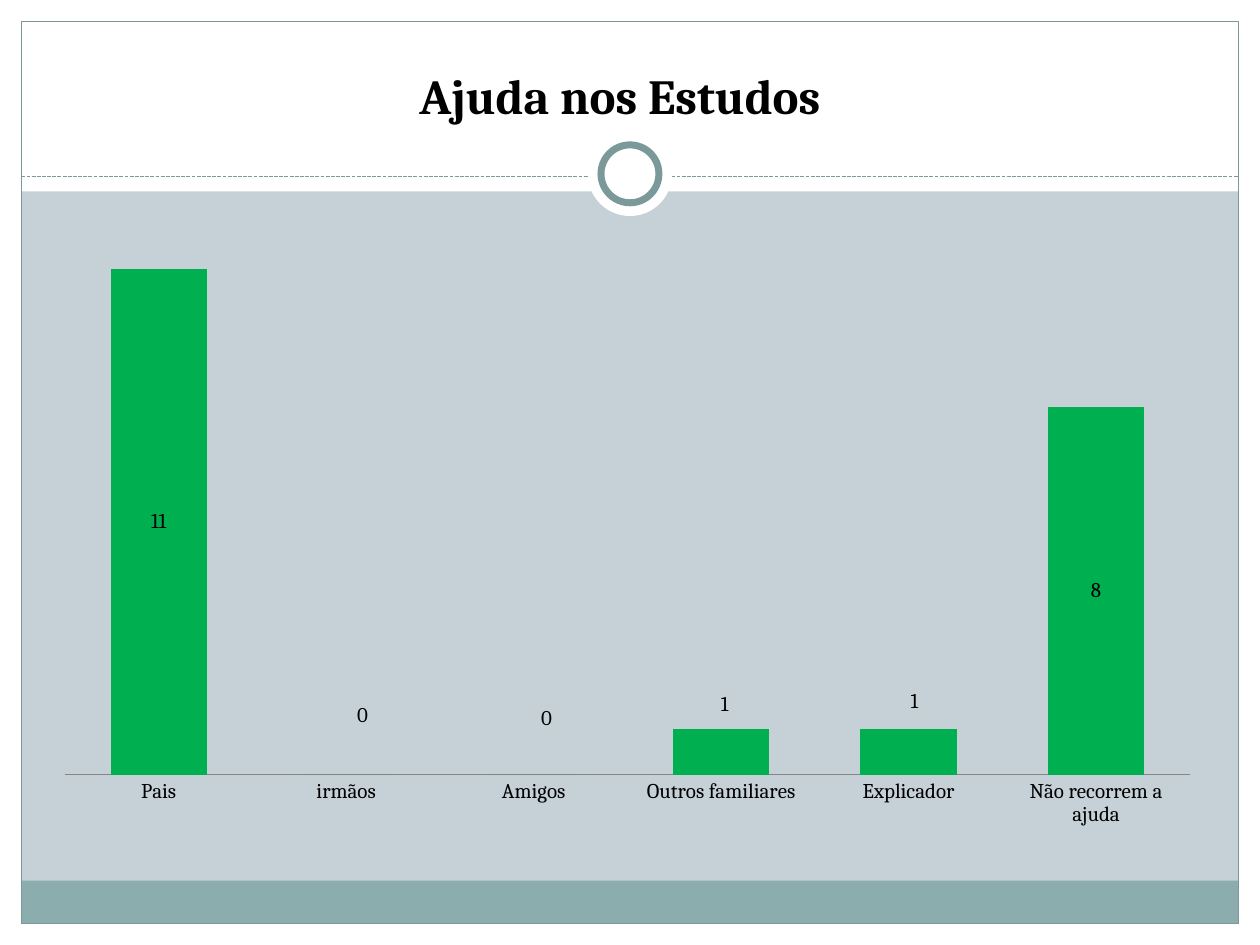
import pptx
import pptx.chart.data
import pptx.dml.color
import pptx.enum.chart
import pptx.enum.dml
import pptx.enum.shapes
import pptx.enum.text
import pptx.oxml
import pptx.oxml.ns
import pptx.util

WIDTH, HEIGHT = 10, 7.5
MARGIN = 0.17
HEADER_HEIGHT = 1.52
RULE_Y = 1.4
FONT = "Cambria"
WHITE, BLACK, TEAL = "FFFFFF", "000000", "7C999A"
SHAPES = pptx.enum.shapes.MSO_SHAPE

HELP_COUNTS = {
    "Pais": 11,
    "irmãos": 0,
    "Amigos": 0,
    "Outros familiares": 1,
    "Explicador": 1,
    "Não recorrem a ajuda": 8,
}
# Label shifts from the bar centre, as shares of the chart's size
LABEL_SHIFTS = {1: (0.014, -0.094), 2: (0.011, -0.089),
                3: (0.003, -0.075), 4: (0.005, -0.079)}


def color(value):
    return pptx.dml.color.RGBColor.from_string(value)


def inches(box):
    return [pptx.util.Inches(length) for length in box]


def style_font(font, size, bold=False):
    font.name = FONT
    font.size = pptx.util.Pt(size)
    font.bold = bold
    font.color.rgb = color(BLACK)


def add_panel(slide, box, fill=None, line_width=None, kind=SHAPES.RECTANGLE):
    panel = slide.shapes.add_shape(kind, *inches(box))
    panel.shadow.inherit = False
    if fill:
        panel.fill.solid()
        panel.fill.fore_color.rgb = color(fill)
    else:
        panel.fill.background()
    if line_width:
        panel.line.color.rgb = color(TEAL)
        panel.line.width = pptx.util.Pt(line_width)
    else:
        panel.line.fill.background()


def add_frame(slide, width, height):
    # White margins and header, then the footer band and outline
    for box in ((0, height - MARGIN, width, MARGIN),
                (0, 0, width, HEADER_HEIGHT),
                (0, 0, MARGIN, height),
                (width - MARGIN, 0, MARGIN, height)):
        add_panel(slide, box, WHITE)
    inner_width = width - 2 * MARGIN
    footer_height = 2 * MARGIN
    add_panel(slide, (MARGIN, height - MARGIN - footer_height, inner_width, footer_height), "8CADAE")
    add_panel(slide, (MARGIN, MARGIN, inner_width, height - 2 * MARGIN), line_width=0.75)

    # Dashed header rule
    rule = slide.shapes.add_connector(
        pptx.enum.shapes.MSO_CONNECTOR.STRAIGHT,
        *inches((MARGIN, RULE_Y, width - MARGIN, RULE_Y)))
    rule.line.color.rgb = color(TEAL)
    rule.line.width = pptx.util.Pt(0.75)
    rule.line.dash_style = pptx.enum.dml.MSO_LINE.SQUARE_DOT
    rule.element.spPr.append(pptx.oxml.parse_xml(
        f"<a:effectLst {pptx.oxml.ns.nsdecls('a')}/>"))

    # Ring on the rule, with a white halo
    center_x, center_y = width / 2, 1.38
    for diameter, line_width in ((0.67, None), (0.46, 4)):
        add_panel(slide, (center_x - diameter / 2, center_y - diameter / 2, diameter, diameter),
                  WHITE, line_width, SHAPES.OVAL)


def add_title(slide, box):
    title = slide.shapes.title
    title.left, title.top, title.width, title.height = inches(box)
    frame = title.text_frame
    frame.word_wrap = True
    frame.auto_size = pptx.enum.text.MSO_AUTO_SIZE.SHAPE_TO_FIT_TEXT
    paragraph = frame.paragraphs[0]
    paragraph.alignment = pptx.enum.text.PP_ALIGN.CENTER
    run = paragraph.add_run()
    run.text = "Ajuda nos Estudos"
    style_font(run.font, 28, bold=True)
    # Bring the title in front of the header panel
    title.element.getparent().append(title.element)


def manual_layout(content):
    return pptx.oxml.parse_xml(
        f"<c:layout {pptx.oxml.ns.nsdecls('c')}><c:manualLayout>{content}"
        "</c:manualLayout></c:layout>")


def add_help_chart(slide, box):
    help_data = pptx.chart.data.CategoryChartData()
    help_data.categories = list(HELP_COUNTS)
    help_data.add_series("Series 1", list(HELP_COUNTS.values()))
    chart = slide.shapes.add_chart(
        pptx.enum.chart.XL_CHART_TYPE.COLUMN_STACKED, *inches(box), help_data).chart
    chart.has_legend = False
    chart.has_title = False
    style_font(chart.font, 10)

    # Axes
    people = chart.value_axis
    people.visible = False
    people.has_major_gridlines = False
    people.minimum_scale, people.maximum_scale = 0, 12
    helpers = chart.category_axis
    helpers.major_tick_mark = pptx.enum.chart.XL_TICK_MARK.NONE
    helpers.format.line.color.rgb = color("868686")
    helpers.format.line.width = pptx.util.Pt(0.75)
    style_font(helpers.tick_labels.font, 12)

    # Bars
    plot = chart.plots[0]
    plot.gap_width, plot.overlap = 95, 100
    plot.vary_by_categories = False
    bars = plot.series[0]
    bars.format.fill.solid()
    bars.format.fill.fore_color.rgb = color("00B050")

    # Values, with the small ones lifted above their bars
    center = pptx.enum.chart.XL_LABEL_POSITION.CENTER
    values = bars.data_labels
    values.show_value = True
    values.position = center
    style_font(values.font, 12)
    for index, (shift_x, shift_y) in LABEL_SHIFTS.items():
        label = bars.points[index].data_label
        style_font(label.font, 12)
        label.position = center
        label_index = chart.element.xpath(f".//c:dLbl/c:idx[@val='{index}']")[0]
        label_index.addnext(manual_layout(f'<c:x val="{shift_x}"/><c:y val="{shift_y}"/>'))
    for leader_lines in chart.element.xpath(".//c:showLeaderLines"):
        leader_lines.set("val", "0")

    # Plot area
    plot_area = chart.element.xpath(".//c:plotArea")[0]
    for automatic in plot_area.xpath("./c:layout"):
        plot_area.remove(automatic)
    plot_area.insert(0, manual_layout(
        '<c:layoutTarget val="inner"/><c:xMode val="edge"/><c:yMode val="edge"/>'
        '<c:x val="0.02"/><c:y val="0.02"/><c:w val="0.96"/><c:h val="0.876"/>'))


def main():
    deck = pptx.Presentation()
    deck.slide_width, deck.slide_height = inches((WIDTH, HEIGHT))
    slide = deck.slides.add_slide(deck.slide_layouts[5])
    slide.background.fill.solid()
    slide.background.fill.fore_color.rgb = color("C5D1D7")
    add_frame(slide, WIDTH, HEIGHT)
    add_help_chart(slide, (0.33, 1.67, 9.3, 5))
    add_title(slide, (2.34, 0.47, 5.16, 0.57))
    deck.save("out.pptx")


if __name__ == "__main__":
    main()
